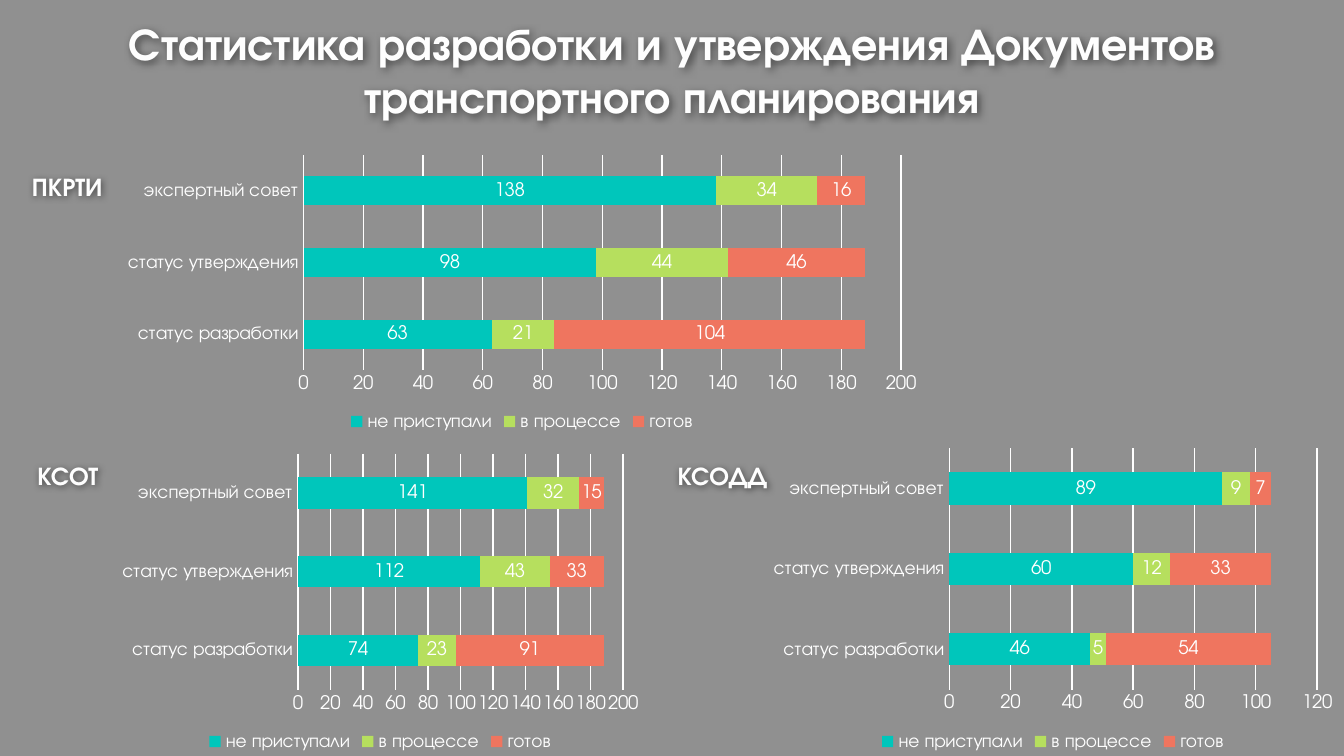
from pptx import Presentation
from pptx.chart.data import CategoryChartData
from pptx.dml.color import RGBColor
from pptx.enum.chart import XL_CHART_TYPE, XL_LABEL_POSITION, XL_LEGEND_POSITION, XL_TICK_MARK
from pptx.enum.text import MSO_ANCHOR, PP_ALIGN
from pptx.oxml import parse_xml
from pptx.util import Inches, Pt

BAR_STACKED = XL_CHART_TYPE.BAR_STACKED
LABEL_CENTER = XL_LABEL_POSITION.CENTER
LEGEND_BOTTOM = XL_LEGEND_POSITION.BOTTOM
TICK_NONE = XL_TICK_MARK.NONE
MIDDLE = MSO_ANCHOR.MIDDLE
CENTER = PP_ALIGN.CENTER

FONT = "TeX Gyre Adventor"
WHITE = "FFFFFF"
TITLE = "Статистика разработки и утверждения Документов транспортного планирования"
CATEGORIES = ["статус разработки", "статус утверждения", "экспертный совет"]
SERIES = [("не приступали", "00C6BB"), ("в процессе", "B6DF5E"), ("готов", "EF755F")]
SHADOW = (
    '<a:effectLst xmlns:a="http://schemas.openxmlformats.org/drawingml/2006/main">'
    '<a:outerShdw blurRad="50800" dist="12700" dir="2700000" algn="tl" rotWithShape="0">'
    '<a:srgbClr val="000000"><a:alpha val="50000"/></a:srgbClr>'
    "</a:outerShdw></a:effectLst>"
)
PANELS = [
    ("ПКРТИ", (-0.14, 1.18, 1.28, 0.43), (0.83, 1.11, 6.11, 2.13), 200,
     [(63, 98, 138), (21, 44, 34), (104, 46, 16)]),
    ("КСОТ", (-0.01, 3.33, 1.03, 0.43), (0.83, 3.33, 4, 2.29), 200,
     [(74, 112, 141), (23, 43, 32), (91, 33, 15)]),
    ("КСОДД", (4.86, 3.33, 1.03, 0.43), (5.67, 3.29, 4.33, 2.33), 120,
     [(46, 60, 89), (5, 12, 9), (54, 33, 7)]),
]


def rgb(value):
    """Return the colour for a hex string."""
    return RGBColor.from_string(value)


def style_font(font, size, color=WHITE, bold=False):
    """Apply the slide's typeface to a font."""
    font.name = FONT
    font.size = Pt(size)
    font.bold = bold
    font.color.rgb = rgb(color)


def add_heading(s, box, text, size):
    """Place a bold, centred heading with a soft shadow."""
    sp = s.shapes.add_textbox(*map(Inches, box))
    sp.fill.background()
    sp.element.spPr.append(parse_xml(SHADOW))
    tf = sp.text_frame
    tf.word_wrap = True
    tf.vertical_anchor = MIDDLE
    tf.margin_left = tf.margin_right = tf.margin_top = tf.margin_bottom = Inches(0.1)
    tf.text = text
    p = tf.paragraphs[0]
    p.alignment = CENTER
    p.line_spacing = 0.98
    style_font(p.runs[0].font, size, "FEFEFE", True)


def add_status_chart(s, box, maximum, rows):
    """Place a stacked bar chart of document statuses."""
    data = CategoryChartData()
    data.categories = CATEGORIES
    for (name, _), values in zip(SERIES, rows):
        data.add_series(name, values)
    chart = s.shapes.add_chart(BAR_STACKED, *map(Inches, box), data).chart
    chart.has_title = False
    style_font(chart.font, 10)
    chart.has_legend = True
    chart.legend.position = LEGEND_BOTTOM
    chart.legend.include_in_layout = False
    style_font(chart.legend.font, 10)

    for axis in (chart.category_axis, chart.value_axis):
        axis.major_tick_mark = axis.minor_tick_mark = TICK_NONE
        style_font(axis.tick_labels.font, 10)
    value_axis = chart.value_axis
    value_axis.minimum_scale, value_axis.maximum_scale = 0, maximum
    value_axis.major_unit = 20
    value_axis.format.line.fill.background()
    value_axis.has_major_gridlines = True
    for line in (chart.category_axis.format.line, value_axis.major_gridlines.format.line):
        line.color.rgb = rgb(WHITE)
        line.width = Pt(0.75)

    plot = chart.plots[0]
    plot.gap_width, plot.overlap = 150, 100
    plot.vary_by_categories = False
    for series, (_, color) in zip(plot.series, SERIES):
        series.format.fill.solid()
        series.format.fill.fore_color.rgb = rgb(color)
        labels = series.data_labels
        labels.show_value = True
        labels.position = LABEL_CENTER
        style_font(labels.font, 10)


def main():
    """Build the slide and save it."""
    prs = Presentation()
    prs.slide_width = Inches(10)
    prs.slide_height = prs.slide_width * 9 // 16
    s = prs.slides.add_slide(prs.slide_layouts[6])
    s.background.fill.solid()
    s.background.fill.fore_color.rgb = rgb("909090")
    add_heading(s, (0, 0, 10, 1.06), TITLE, 24)
    for name, label_box, chart_box, maximum, rows in PANELS:
        add_status_chart(s, chart_box, maximum, rows)
        add_heading(s, label_box, name, 13.7)
    prs.save("out.pptx")


if __name__ == "__main__":
    main()
